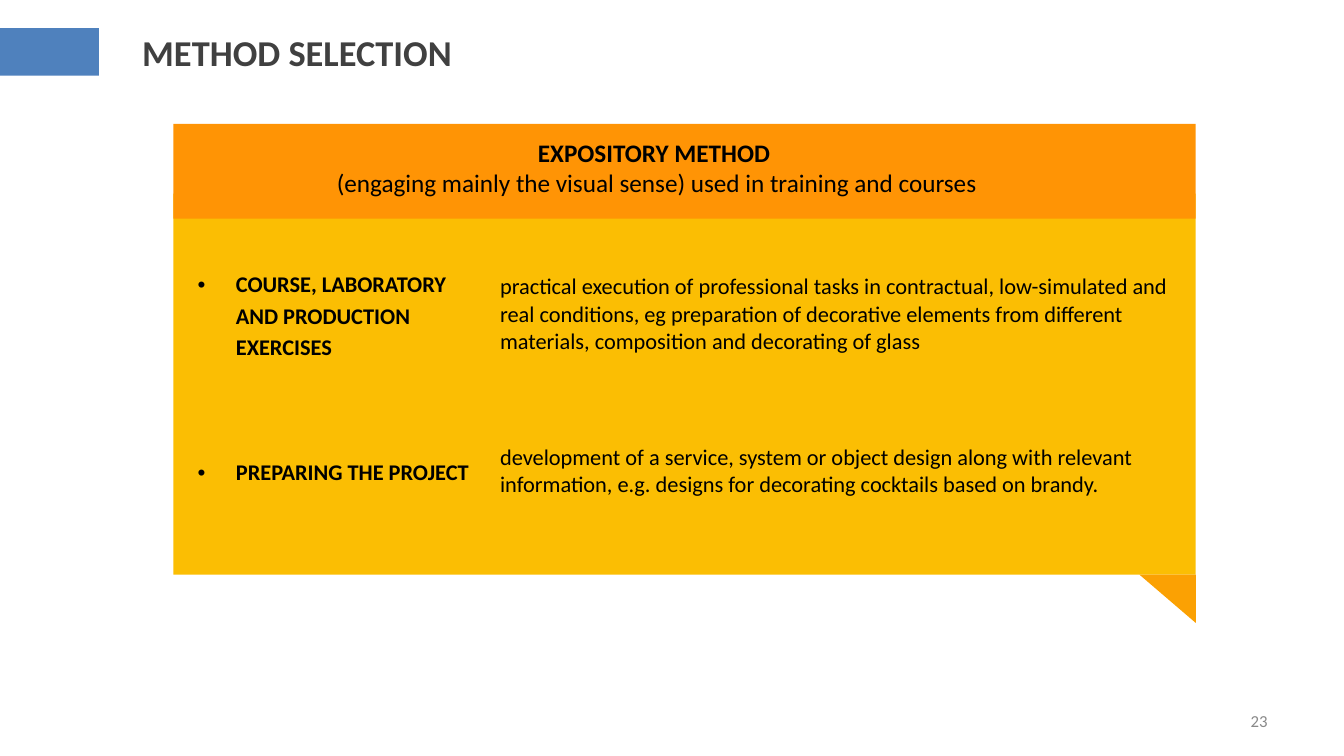
from lxml.etree import SubElement
from pptx import Presentation
from pptx.dml.color import RGBColor
from pptx.enum.shapes import MSO_SHAPE
from pptx.enum.text import MSO_ANCHOR, PP_ALIGN
from pptx.oxml.ns import qn
from pptx.util import Inches, Pt


def color(value):
    return RGBColor.from_string(value)


def write(paragraph, text, size, bold=False, font_color="000000", alignment=PP_ALIGN.LEFT):
    paragraph.alignment = alignment
    run = paragraph.add_run()
    run.text = text
    font_format = {"name": "Calibri", "size": Pt(size), "bold": bold}
    for name, value in font_format.items():
        setattr(run.font, name, value)
    run.font.color.rgb = color(font_color)


presentation = Presentation()
presentation.slide_width = Inches(13.33)
presentation.slide_height = Inches(7.5)
slide = presentation.slides.add_slide(presentation.slide_layouts[5])

title = slide.shapes.title
title_format = {"left": 1.31, "top": 0.21, "width": 9.29, "height": 0.62}
for name, value in title_format.items():
    setattr(title, name, Inches(value))
title.text_frame.vertical_anchor = MSO_ANCHOR.MIDDLE
write(title.text_frame.paragraphs[0], "METHOD SELECTION", 26, True, "404040")

blocks = [
    (MSO_SHAPE.RECTANGLE, 0, 0.28, 0.98, 0.47, "4F81BD", 0),
    (MSO_SHAPE.RECTANGLE, 1.72, 1.92, 10.14, 3.78, "FBBE03", 0),
    (MSO_SHAPE.RECTANGLE, 1.72, 1.23, 10.14, 0.94, "FF9405", 0),
    (MSO_SHAPE.RIGHT_TRIANGLE, 11.3, 5.7, 0.56, 0.48, "FBA103", 180),
]
for kind, left, top, width, height, fill, rotation in blocks:
    shape = slide.shapes.add_shape(kind, Inches(left), Inches(top), Inches(width), Inches(height))
    shape.shadow.inherit = False
    shape.fill.solid()
    shape.fill.fore_color.rgb = color(fill)
    shape.line.fill.background()
    shape.rotation = rotation

heading = slide.shapes.add_textbox(Inches(1.91), Inches(1.31), Inches(9.21), Inches(0.71)).text_frame
heading.word_wrap = True
write(heading.paragraphs[0], "EXPOSITORY METHOD ", 18, True, alignment=PP_ALIGN.CENTER)
write(
    heading.add_paragraph(),
    "(engaging mainly the visual sense) used in training and courses",
    18,
    alignment=PP_ALIGN.CENTER,
)

methods = [
    (
        "COURSE, LABORATORY AND PRODUCTION EXERCISES",
        "practical execution of professional tasks in contractual, low-simulated and real conditions, "
        "eg preparation of decorative elements from different materials, composition and decorating of glass",
    ),
    (
        "PREPARING THE PROJECT",
        "development of a service, system or object design along with relevant information, "
        "e.g. designs for decorating cocktails based on brandy.",
    ),
]
table = slide.shapes.add_table(2, 2, Inches(1.86), Inches(2.27), Inches(9.84), Inches(3.11)).table
table.first_row = False
table.horz_banding = False
no_grid_style = "{2D5ABB26-0587-4C30-8999-92F81FD0307C}"
table._tbl.tblPr.find(qn("a:tableStyleId")).text = no_grid_style
for column, width in zip(table.columns, (3, 6.84)):
    column.width = Inches(width)
for row, height, texts in zip(table.rows, (1.7, 1.41), methods):
    row.height = Inches(height)
    for cell, text, is_method in zip(row.cells, texts, (True, False)):
        cell.fill.background()
        cell.vertical_anchor = MSO_ANCHOR.MIDDLE
        paragraph = cell.text_frame.paragraphs[0]
        if is_method:
            paragraph.line_spacing = 1.14
            paragraph.space_after = Pt(6)
            properties = paragraph._p.get_or_add_pPr()
            properties.set("marL", str(Inches(0.38)))
            properties.set("indent", str(Inches(-0.38)))
            SubElement(properties, qn("a:buFont"), typeface="Arial")
            SubElement(properties, qn("a:buChar"), char="•")
        write(paragraph, text, 16, is_method)

page_number = slide.shapes.add_textbox(Inches(9.56), Inches(6.95), Inches(3.11), Inches(0.4)).text_frame
page_number.word_wrap = True
page_number.vertical_anchor = MSO_ANCHOR.MIDDLE
write(page_number.paragraphs[0], "23", 12, False, "898989", PP_ALIGN.RIGHT)

presentation.save("out.pptx")
